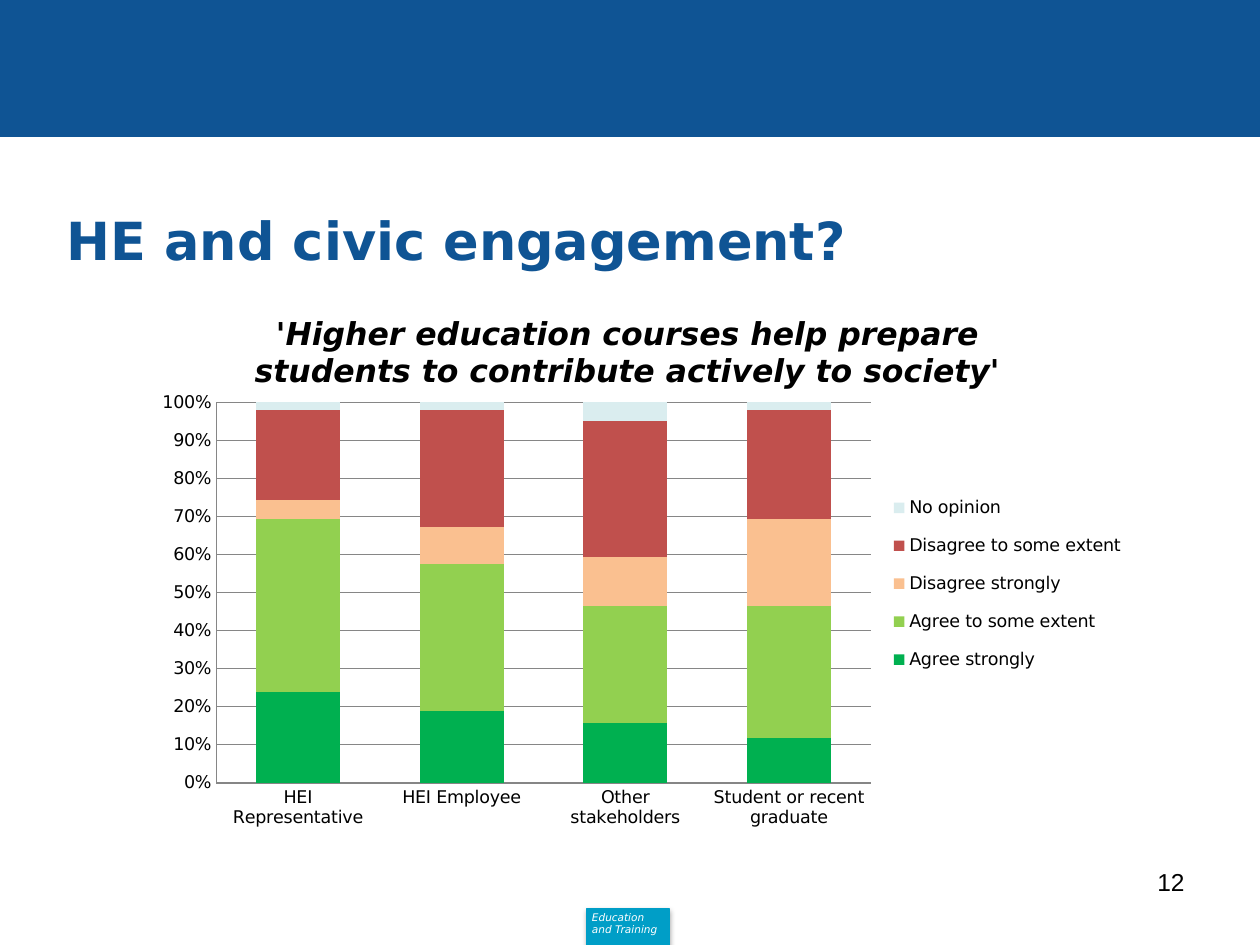
from lxml import etree
from pptx import Presentation
from pptx.chart.data import CategoryChartData
from pptx.dml.color import RGBColor
from pptx.enum.chart import XL_CHART_TYPE, XL_LEGEND_POSITION, XL_TICK_MARK
from pptx.enum.shapes import MSO_SHAPE
from pptx.enum.text import MSO_ANCHOR, PP_ALIGN
from pptx.oxml import parse_xml
from pptx.oxml.ns import nsdecls, qn
from pptx.util import Inches, Pt

BLUE = RGBColor(0x0F, 0x54, 0x94)
CYAN = RGBColor(0x00, 0x9E, 0xC7)
WHITE = RGBColor(0xFF, 0xFF, 0xFF)
BLACK = RGBColor(0x00, 0x00, 0x00)
GRAY = RGBColor(0x86, 0x86, 0x86)
GREEN = RGBColor(0x00, 0xB0, 0x50)
LIGHT_GREEN = RGBColor(0x92, 0xD0, 0x50)
PEACH = RGBColor(0xFA, 0xC0, 0x90)
RED = RGBColor(0xC0, 0x50, 0x4D)
PALE = RGBColor(0xDA, 0xED, 0xEF)

CATEGORIES = ["HEI Representative", "HEI Employee", "Other stakeholders",
              "Student or recent graduate"]
ANSWERS = [
    ("Agree strongly", GREEN, (24, 19, 16, 12)),
    ("Agree to some extent", LIGHT_GREEN, (46, 39, 31, 35)),
    ("Disagree strongly", PEACH, (5, 10, 13, 23)),
    ("Disagree to some extent", RED, (24, 31, 36, 29)),
    ("No opinion", PALE, (2, 2, 5, 2)),
]
STATEMENT = ("'Higher education courses help prepare students "
             "to contribute actively to society'")


def place(element, index, inner=False, **fractions):
    old = element.find(qn("c:layout"))
    if old is not None:
        element.remove(old)
    layout = etree.Element(qn("c:layout"))
    manual = etree.SubElement(layout, qn("c:manualLayout"))
    if inner:
        etree.SubElement(manual, qn("c:layoutTarget")).set("val", "inner")
    for axis in "xy":
        etree.SubElement(manual, qn(f"c:{axis}Mode")).set("val", "edge")
    for name, value in fractions.items():
        etree.SubElement(manual, qn(f"c:{name}")).set("val", str(value))
    element.insert(index, layout)


class Deck:
    font = "DejaVu Sans"

    def __init__(self):
        self.prs = Presentation()
        self.prs.slide_width, self.prs.slide_height = Inches(10), Inches(7.5)
        self.s = self.prs.slides.add_slide(self.prs.slide_layouts[6])

    def style(self, font, size, color, bold=False, italic=False, name=None):
        font.name, font.size = name or self.font, Pt(size)
        font.bold, font.italic = bold, italic
        font.color.rgb = color

    def rect(self, box, color, shadow=False):
        sp = self.s.shapes.add_shape(MSO_SHAPE.RECTANGLE, *map(Inches, box))
        sp.shadow.inherit = False
        sp.fill.solid()
        sp.fill.fore_color.rgb = color
        sp.line.color.rgb = color
        sp.line.width = Pt(0.75)
        if shadow:
            sp._element.spPr.find(qn("a:effectLst")).append(parse_xml(
                f'<a:outerShdw {nsdecls("a")} blurRad="{Pt(3.1)}" '
                f'dist="{Pt(1.8)}" dir="5400000" rotWithShape="0">'
                '<a:srgbClr val="000000"><a:alpha val="35000"/></a:srgbClr>'
                '</a:outerShdw>'))

    def text(self, box, lines, size, color, align=PP_ALIGN.LEFT,
             anchor=MSO_ANCHOR.TOP, hanging=0, **look):
        tf = self.s.shapes.add_textbox(*map(Inches, box)).text_frame
        tf.word_wrap = True
        tf.vertical_anchor = anchor
        p = tf.paragraphs[0]
        p.alignment = align
        if hanging:
            pPr = p._p.get_or_add_pPr()
            pPr.set("marL", str(Inches(hanging)))
            pPr.set("indent", str(-Inches(hanging)))
        for i, line in enumerate(lines):
            if i:
                p.add_line_break()
            r = p.add_run()
            r.text = line
            self.style(r.font, size, color, **look)

    def chart(self, box, title, categories, answers):
        data = CategoryChartData()
        data.categories = categories
        for name, _, values in answers:
            data.add_series(name, values)
        chart = self.s.shapes.add_chart(
            XL_CHART_TYPE.COLUMN_STACKED_100, *map(Inches, box), data).chart
        self.style(chart.font, 10, BLACK)

        p = chart.chart_title.text_frame.paragraphs[0]
        r = p.add_run()
        r.text = title
        self.style(r.font, 18, BLACK, bold=True, italic=True)

        plot = chart.plots[0]
        plot.gap_width, plot.overlap = 95, 100
        plot.vary_by_categories = False
        for series, (_, color, _) in zip(plot.series, answers):
            series.format.fill.solid()
            series.format.fill.fore_color.rgb = color

        value_axis = chart.value_axis
        value_axis.has_major_gridlines = True
        value_axis.tick_labels.number_format = "0%"
        value_axis.tick_labels.number_format_is_linked = False
        for axis in (chart.category_axis, value_axis):
            axis.major_tick_mark = axis.minor_tick_mark = XL_TICK_MARK.NONE
            axis.format.line.color.rgb = GRAY
            axis.format.line.width = Pt(0.75)
        value_axis.major_gridlines.format.line.color.rgb = GRAY
        value_axis.major_gridlines.format.line.width = Pt(0.75)

        chart.has_legend = True
        chart.legend.position = XL_LEGEND_POSITION.RIGHT
        chart.legend.include_in_layout = False
        self.style(chart.legend.font, 10, BLACK)

        place(chart.chart_title._element, 1, x=0.16, y=0.04)
        place(chart._chartSpace.chart.plotArea, 0, inner=True,
              x=0.13, y=0.2, w=0.6, h=0.64)
        place(chart.legend._element, 1, x=0.74, y=0.33, w=0.23, h=0.35)


def main():
    deck = Deck()
    deck.rect((0, 0, 10, 1.08), BLUE)
    deck.rect((4.66, 7.21, 0.65, 0.29), CYAN, shadow=True)
    deck.text((4.6, 7.18, 0.83, 0.27), ["Education", "and Training"], 6, WHITE,
              italic=True)
    deck.text((0.43, 1.39, 9, 1.02), ["HE and civic engagement?"], 30, BLUE,
              anchor=MSO_ANCHOR.MIDDLE, hanging=0.39, bold=True)
    deck.text((7.17, 6.83, 2.33, 0.52), ["12"], 14, BLACK,
              align=PP_ALIGN.RIGHT, name="Arial")
    deck.chart((0.59, 2.25, 8.66, 4.72), STATEMENT, CATEGORIES, ANSWERS)
    deck.prs.save("out.pptx")


if __name__ == "__main__":
    main()
